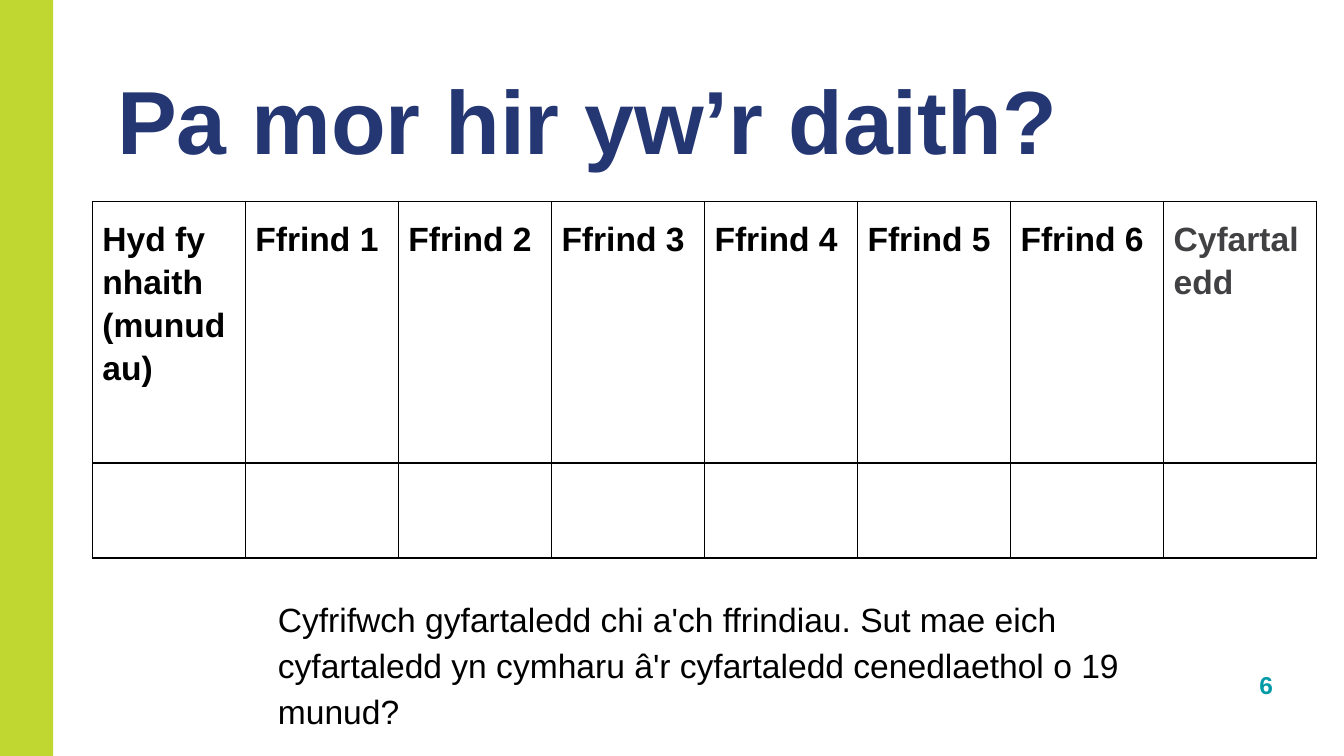
from lxml import etree
from pptx import Presentation
from pptx import util as u
from pptx.dml.color import RGBColor
from pptx.enum import shapes, text
from pptx.oxml import ns

Pt = u.Pt


def write(frame, content, size=18, color="000000", bold=False,
          align=text.PP_ALIGN.LEFT, spacing=None):
    frame.word_wrap = True
    paragraph = frame.paragraphs[0]
    paragraph.alignment = align
    paragraph.line_spacing = spacing
    run = paragraph.add_run()
    run.text = content
    run.font.name = "Arial"
    run.font.size = Pt(size)
    run.font.bold = bold
    run.font.color.rgb = RGBColor.from_string(color)


def add_borders(cell, color):
    properties = cell._tc.get_or_add_tcPr()
    for position, side in enumerate(("lnL", "lnR", "lnT", "lnB")):
        line = etree.Element(ns.qn(f"a:{side}"), w=str(Pt(1)))
        fill = etree.SubElement(line, ns.qn("a:solidFill"))
        etree.SubElement(fill, ns.qn("a:srgbClr"), val=color)
        properties.insert(position, line)


presentation = Presentation()
presentation.slide_width = Pt(720)
presentation.slide_height = Pt(405)
slide = presentation.slides.add_slide(presentation.slide_layouts[6])

bar = slide.shapes.add_shape(
    shapes.MSO_SHAPE.RECTANGLE, Pt(-8.5), Pt(-3), Pt(37), Pt(411))
bar.shadow.inherit = False
bar.fill.solid()
bar.fill.fore_color.rgb = RGBColor.from_string("C0D631")
bar.line.fill.background()

number = slide.shapes.add_textbox(Pt(632), Pt(355), Pt(57), Pt(23))
number.text_frame.vertical_anchor = text.MSO_ANCHOR.BOTTOM
write(number.text_frame, "6", size=13.1, color="009BA7", bold=True,
      align=text.PP_ALIGN.RIGHT)

title = slide.shapes.add_textbox(Pt(0), Pt(27.4), Pt(643), Pt(101))
title.text_frame.margin_top = title.text_frame.margin_bottom = Pt(7.2)
write(title.text_frame, "Pa mor hir yw’r daith? ", size=48, color="253773",
      bold=True, align=text.PP_ALIGN.CENTER)

headings = ["Hyd fy nhaith (munudau)"]
headings += [f"Ffrind {friend}" for friend in range(1, 7)]
headings.append("Cyfartaledd")

table = slide.shapes.add_table(
    2, len(headings), Pt(49.5), Pt(108), Pt(656), Pt(191)).table
table.first_row = False
table.horz_banding = False
for column in table.columns:
    column.width = Pt(82)
for row, height in zip(table.rows, (140, 51)):
    row.height = Pt(height)
for cell in table.iter_cells():
    cell.margin_left = cell.margin_right = Pt(5.4)
    cell.margin_top = cell.margin_bottom = Pt(7.2)
    cell.fill.background()
    add_borders(cell, "000000")
for index, heading in enumerate(headings):
    color = "414042" if heading == "Cyfartaledd" else "000000"
    write(table.cell(0, index).text_frame, heading, color=color,
          bold=True, spacing=1.15)

question = slide.shapes.add_textbox(Pt(141.8), Pt(314), Pt(472), Pt(81))
write(question.text_frame,
      "Cyfrifwch gyfartaledd chi a'ch ffrindiau. Sut mae eich cyfartaledd "
      "yn cymharu â'r cyfartaledd cenedlaethol o 19 munud?", spacing=1.15)

presentation.save("out.pptx")
